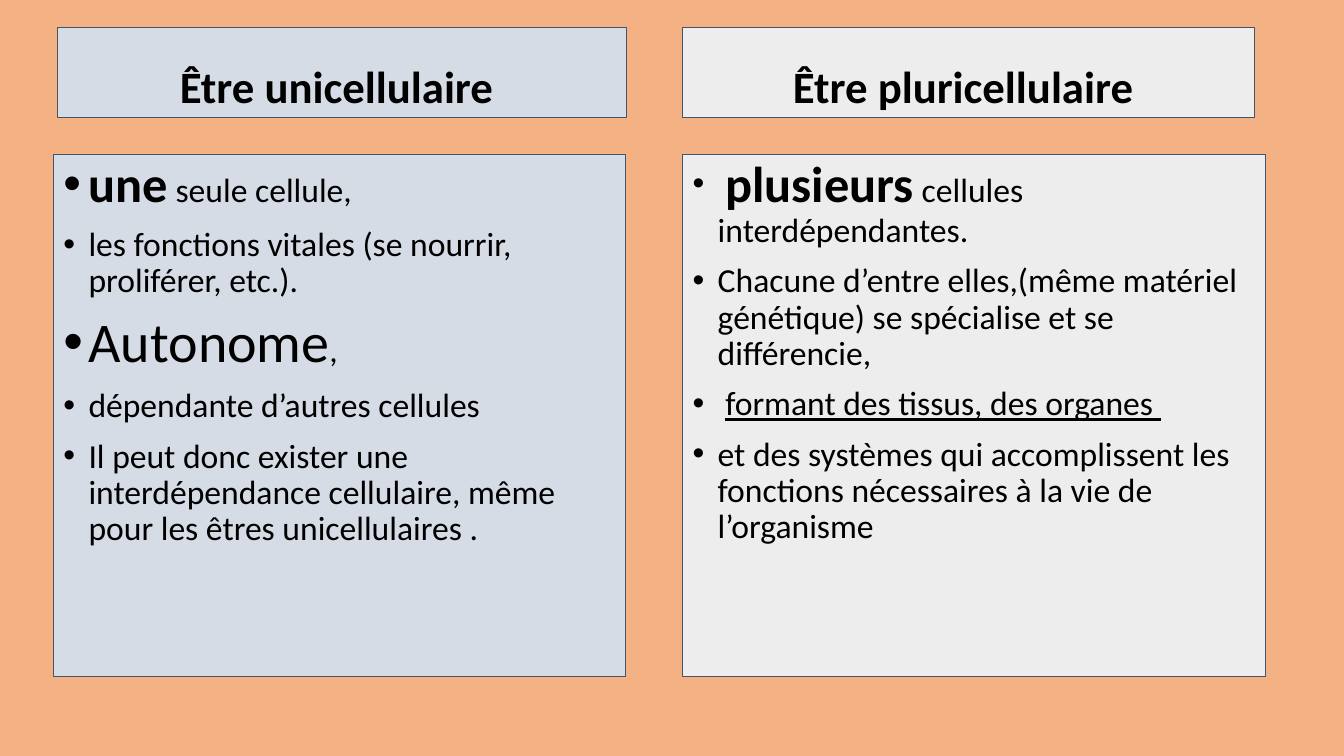
from dataclasses import dataclass

from lxml.etree import SubElement
from pptx import Presentation
from pptx.dml.color import RGBColor as RGB
from pptx.enum.shapes import MSO_SHAPE as SHAPE
from pptx.enum.text import MSO_ANCHOR as ANCHOR, PP_ALIGN as ALIGN
from pptx.oxml.ns import qn
from pptx.util import Inches, Pt

# Each run is (text, style); each paragraph is a list of runs.
COLUMNS = [
    {
        "title": "Être unicellulaire ",
        "fill": "D6DCE5",
        "head": (0.57, 5.64),
        "body": (0.53, 5.67),
        "points": [
            [("une", "key"), (" seule cellule,", "text")],
            [("les fonctions vitales (se nourrir, proliférer, etc.).", "text")],
            [("Autonome", "large"), (",", "text")],
            [("dépendante d’autres cellules", "text")],
            [("Il peut donc exister une interdépendance cellulaire, "
              "même pour les êtres unicellulaires .", "text")],
        ],
    },
    {
        "title": "Être pluricellulaire ",
        "fill": "EDEDED",
        "head": (6.77, 5.67),
        "body": (6.77, 5.78),
        "points": [
            [(" ", "text"), ("plusieurs", "key"),
             (" cellules interdépendantes.", "text")],
            [("Chacune d’entre elles,(même matériel génétique) "
              "se spécialise et se différencie,", "text")],
            [(" ", "text"), ("formant des tissus, des organes ", "under")],
            [("et des systèmes qui accomplissent les fonctions "
              "nécessaires à la vie de l’organisme", "text")],
        ],
    },
]
ROWS = {"head": (0.27, 0.9), "body": (1.53, 5.18)}


@dataclass(frozen=True)
class Theme:
    font: str = "Calibri"
    back: str = "F4B183"
    ink: str = "000000"
    edge: str = "44546A"
    indent: float = 0.25


THEME = Theme()
# Size, bold, underline
STYLES = {
    "title": (32, True, False),
    "key": (36, True, False),
    "large": (40, False, False),
    "text": (24, False, False),
    "under": (24, False, True),
}


def add_panel(slide, column, row):
    left, width = column[row]
    top, height = ROWS[row]
    panel = slide.shapes.add_shape(
        SHAPE.RECTANGLE, *map(Inches, (left, top, width, height)))
    panel.shadow.inherit = False
    panel.fill.solid()
    panel.fill.fore_color.rgb = RGB.from_string(column["fill"])
    panel.line.color.rgb = RGB.from_string(THEME.edge)
    panel.line.width = Pt(0.75)
    panel.text_frame.word_wrap = True
    return panel.text_frame


def add_bullet(para):
    props = para._p.get_or_add_pPr()
    step = Inches(THEME.indent)
    props.set("marL", str(step))
    props.set("indent", str(-step))
    SubElement(props, qn("a:buFont")).set("typeface", "Arial")
    SubElement(props, qn("a:buChar")).set("char", "•")


def write(frame, paras, align, bullets=False):
    for i, runs in enumerate(paras):
        para = frame.add_paragraph() if i else frame.paragraphs[0]
        if bullets:
            add_bullet(para)
        para.alignment = align
        para.line_spacing = 0.9
        para.space_before = Pt(10 if i else 0)
        for text, style in runs:
            run = para.add_run()
            run.text = text
            font = run.font
            size, font.bold, font.underline = STYLES[style]
            font.size = Pt(size)
            font.name = THEME.font
            font.color.rgb = RGB.from_string(THEME.ink)


def main():
    deck = Presentation()
    deck.slide_width, deck.slide_height = Inches(13.33), Inches(7.5)
    slide = deck.slides.add_slide(deck.slide_layouts[6])
    slide.background.fill.solid()
    slide.background.fill.fore_color.rgb = RGB.from_string(THEME.back)
    for column in COLUMNS:
        head = add_panel(slide, column, "head")
        head.vertical_anchor = ANCHOR.BOTTOM
        write(head, [[(column["title"], "title")]], ALIGN.CENTER)
        body = add_panel(slide, column, "body")
        body.vertical_anchor = ANCHOR.TOP
        write(body, column["points"], ALIGN.LEFT, bullets=True)
    deck.save("out.pptx")


if __name__ == "__main__":
    main()
